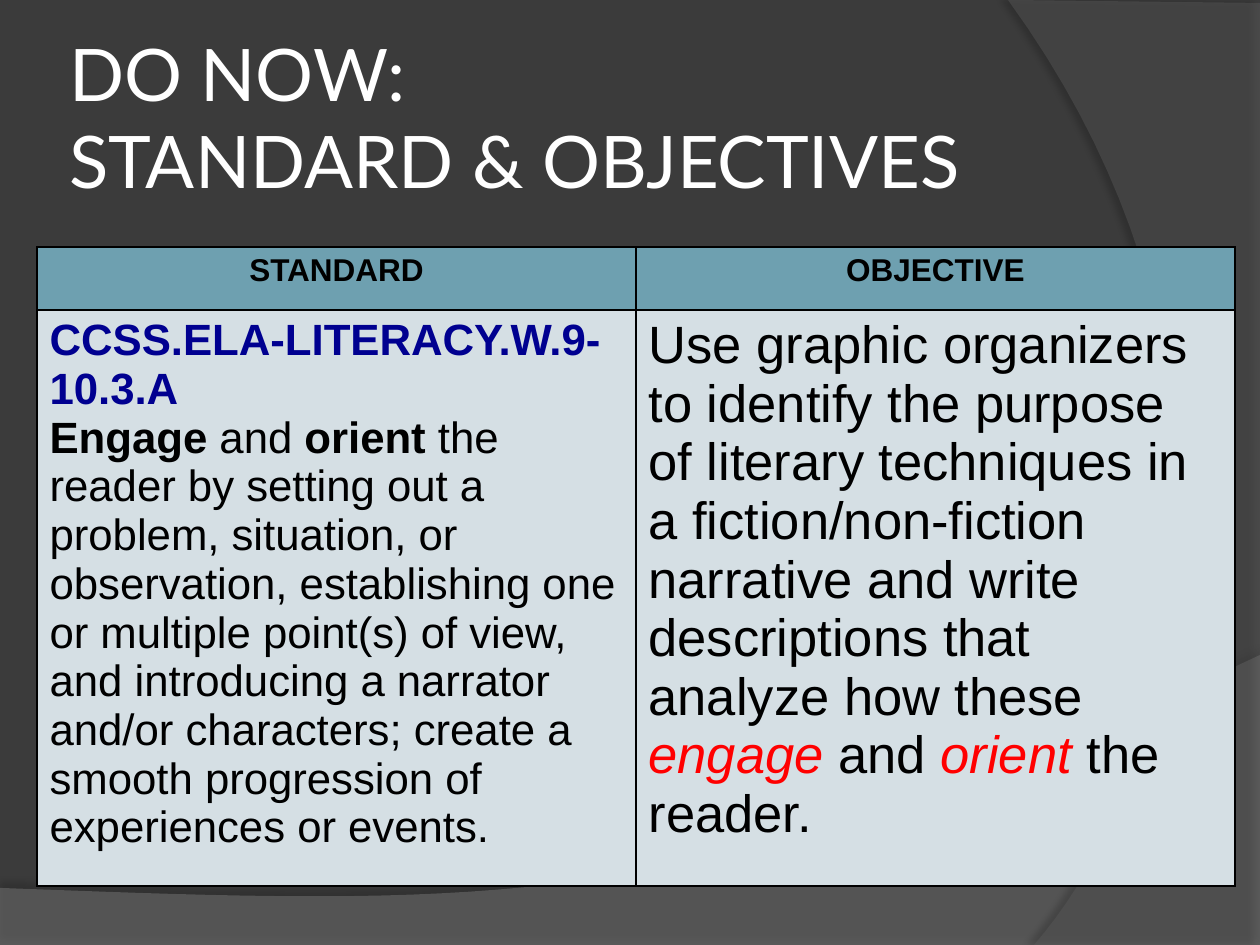
from lxml.etree import SubElement
from pptx import Presentation
from pptx.dml.color import RGBColor
from pptx.enum.text import MSO_ANCHOR, MSO_AUTO_SIZE, PP_ALIGN
from pptx.oxml.ns import qn
from pptx.util import Pt

PX = 914400 / 126
HUES = {
    "back": "3B3B3B", "wave": "7F7F7F", "arc": "5E5E5E", "white": "FFFFFF",
    "black": "000000", "head": "6EA0B0", "body": "D5DFE4", "navy": "000090", "red": "FF0000",
}


def px(n):
    return round(n * PX)


def style(run, size, hue="black", face="Arial", bold=False, italic=False):
    looks = {"name": face, "size": Pt(size), "bold": bold, "italic": italic}
    for key, value in looks.items():
        setattr(run.font, key, value)
    run.font.color.rgb = RGBColor.from_string(HUES[hue])


deck = Presentation()
deck.slide_width, deck.slide_height = px(1260), px(945)
slide = deck.slides.add_slide(deck.slide_layouts[5])
slide.background.fill.solid()
slide.background.fill.fore_color.rgb = RGBColor.from_string(HUES["back"])

swoops = [
    ("wave", 45, 35, 270, [(0, 888), (0, 946), (1260, 946)],
     [(1260, 655), (704, 919), (493, 906), (0, 888)]),
    ("arc", 40, 45, 180, [(1260, 3), (1260, 945)],
     [(1034, 945), (1178, 780), (1283, 378), (1008, 0)]),
]
for hue, alpha, shade, angle, edge, bend in swoops:
    curve = []
    for step in range(41):
        t = step / 40
        parts = [(1 - t) ** 3, 3 * t * (1 - t) ** 2, 3 * t * t * (1 - t), t ** 3]
        curve.append(tuple(sum(w * p[axis] for w, p in zip(parts, bend)) for axis in (0, 1)))
    points = [(px(x), px(y)) for x, y in edge + curve]
    pen = slide.shapes.build_freeform(*points[0])
    pen.add_line_segments(points[1:], close=True)
    swoop = pen.convert_to_shape()
    swoop.line.fill.background()
    swoop.fill.solid()
    swoop.fill.fore_color.rgb = RGBColor.from_string(HUES[hue])
    swoop.shadow.inherit = False
    props = swoop.element.spPr
    tint = props.find(qn("a:solidFill"))[0]
    SubElement(tint, qn("a:alpha"), val=str(alpha * 1000))
    cast = SubElement(props.find(qn("a:effectLst")), qn("a:outerShdw"),
                      blurRad=str(Pt(4)), dist=str(Pt(4)), dir=str(angle * 60000))
    dark = SubElement(cast, qn("a:srgbClr"), val=HUES["black"])
    SubElement(dark, qn("a:alpha"), val=str(shade * 1000))

title = slide.shapes.title
slide.shapes.element.append(title.element)
for key, value in {"left": 63, "top": 38, "width": 1029, "height": 157}.items():
    setattr(title, key, px(value))
frame = title.text_frame
frame.text = "DO NOW:\vSTANDARD & OBJECTIVES"
frame.word_wrap = True
frame.auto_size = MSO_AUTO_SIZE.NONE
frame.vertical_anchor = MSO_ANCHOR.MIDDLE
for side in ("left", "right", "top", "bottom"):
    setattr(frame, f"margin_{side}", px(6))
frame.paragraphs[0].alignment = PP_ALIGN.LEFT
for run in frame.paragraphs[0].runs:
    style(run, 41.4, "white", "Lato")

bold, red = {"bold": True}, {"hue": "red", "italic": True}
cells = [
    [(18, [[("STANDARD", bold)]]), (18, [[("OBJECTIVE", bold)]])],
    [
        (25, [
            [("CCSS.ELA-LITERACY.W.9-10.3.A", {"hue": "navy", "bold": True})],
            [("Engage", bold), (" and ", {}), ("orient", bold),
             (" the reader by setting out a problem, situation, or observation, "
              "establishing one or multiple point(s) of view, and introducing a narrator "
              "and/or characters; create a smooth progression of experiences or events.", {})],
        ]),
        (30, [
            [("Use graphic organizers to identify the purpose of literary techniques in a "
              "fiction/non-fiction narrative and write descriptions that analyze how these ", {}),
             ("engage ", red), ("and ", {}), ("orient ", red), ("the reader.", {})],
        ]),
    ],
]
table = slide.shapes.add_table(2, 2, px(37), px(247), px(1198), px(639)).table
for col in table.columns:
    col.width = px(599)
for row, tall in zip(table.rows, (63, 576)):
    row.height = px(tall)

for r, line in enumerate(cells):
    for c, (size, paras) in enumerate(line):
        cell = table.cell(r, c)
        props = cell._tc.get_or_add_tcPr()
        for side in ("lnL", "lnR", "lnT", "lnB"):
            rule = SubElement(props, qn(f"a:{side}"), w=str(Pt(1)))
            ink = SubElement(rule, qn("a:solidFill"))
            SubElement(ink, qn("a:srgbClr"), val=HUES["black"])
        cell.fill.solid()
        cell.fill.fore_color.rgb = RGBColor.from_string(HUES["body" if r else "head"])
        for i, runs in enumerate(paras):
            para = cell.text_frame.add_paragraph() if i else cell.text_frame.paragraphs[0]
            para.alignment = PP_ALIGN.LEFT if r else PP_ALIGN.CENTER
            for text, looks in runs:
                run = para.add_run()
                run.text = text
                style(run, size, **looks)

deck.save("out.pptx")
